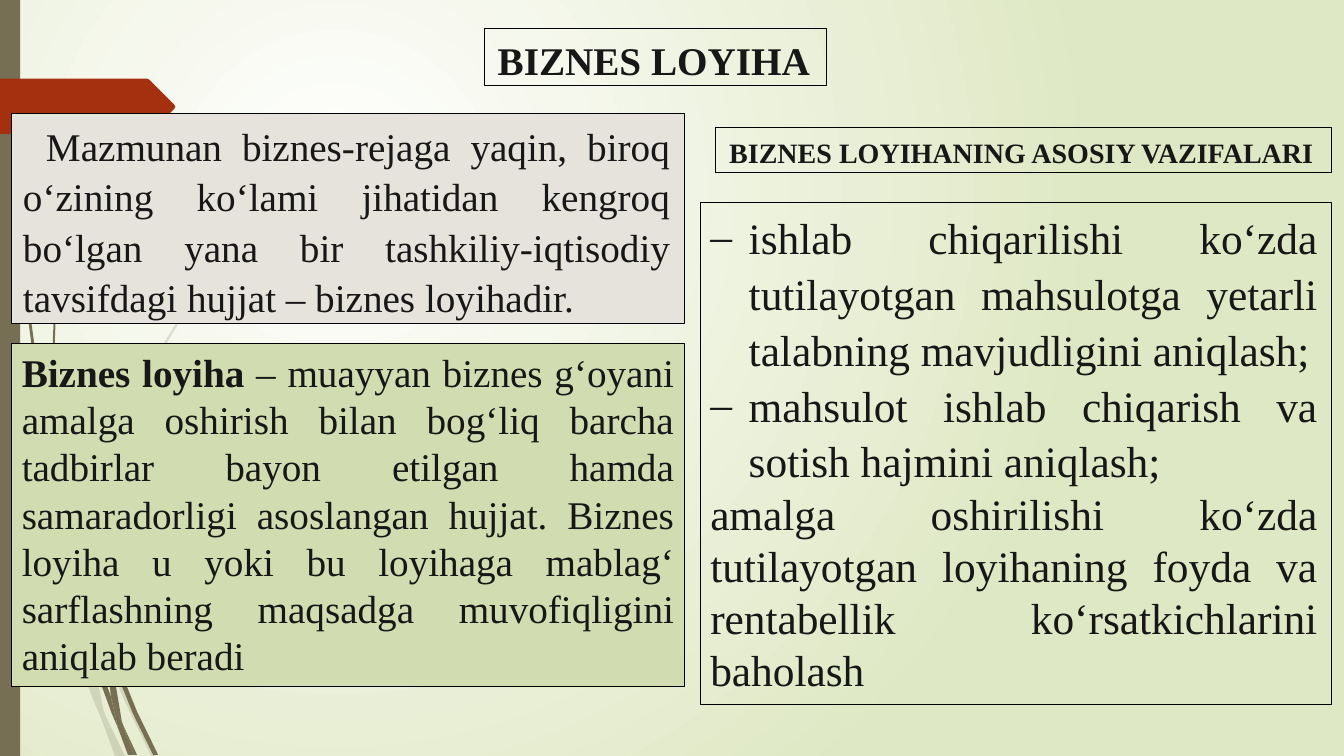
from lxml import etree
from pptx import Presentation, util as u
from pptx.dml.color import RGBColor
from pptx.enum import shapes, text
from pptx.oxml.ns import qn

FONT, INK, OLIVE, RUST = "Times New Roman", "181717", "766F54", "A53010"
UNIT = u.Cm(0.0254)  # grid step of the outlines below

PALE = [
    [(11, 350), (9, 322), (0, 282), (0, 299), (10, 344)],
    [(92, 607), (88, 596), (88, 610), (123, 694), (150, 750), (155, 750), (127, 692)],
    [(119, 750), (124, 750), (105, 711)],
    [(93, 683), (70, 619), (31, 469), (17, 376), (11, 350), (28, 470), (65, 621),
     (92, 693), (101, 714), (99, 707)],
    [(84, 599), (87, 646), (93, 683), (96, 692), (105, 711), (103, 706), (91, 646),
     (88, 610), (88, 608)],
    [(88, 584), (92, 522), (110, 462), (132, 404), (160, 349), (193, 295), (229, 245),
     (268, 198), (290, 175), (312, 154), (312, 153), (289, 175), (268, 197), (228, 244),
     (191, 294), (158, 348), (129, 403), (107, 461), (89, 522), (85, 584), (85, 586),
     (88, 596)],
    [(101, 714), (114, 750), (119, 750)],
    [(96, 692), (93, 683), (99, 707), (101, 714), (119, 750), (105, 711)],
]
DARK = [
    [(7, 110), (17, 233), (33, 355), (56, 477), (57, 481), (55, 457), (55, 453),
     (36, 355), (19, 232), (8, 109), (5, 48), (4, 0), (3, 0), (4, 48)],
    [(113, 649), (110, 641), (111, 656), (132, 708), (152, 749), (157, 749), (136, 706)],
    [(110, 691), (98, 657), (72, 556), (64, 505), (57, 477), (68, 557), (93, 659),
     (111, 708), (117, 722), (116, 717)],
    [(60, 472), (58, 453), (54, 349), (58, 245), (63, 193), (70, 141), (62, 193),
     (56, 245), (52, 349), (55, 449)],
    [(133, 749), (136, 749), (122, 719)],
    [(117, 722), (127, 749), (131, 749)],
    [(106, 645), (110, 691), (116, 706), (122, 719), (121, 716), (111, 656), (109, 651)],
    [(116, 706), (110, 691), (116, 717), (117, 722), (130, 749), (133, 749), (122, 719)],
]
TAG = [(173, 108), (148, 133), (146, 134), (136, 134), (0, 133), (0, 78), (136, 78),
       (146, 78), (148, 79), (173, 104), (174, 106)]


def rgb(code):
    return RGBColor.from_string(code)


def paint(shape, code, alpha=None):
    """Fill without an outline; alpha is a percentage."""
    shape.shadow.inherit = False
    shape.fill.solid()
    shape.fill.fore_color.rgb = rgb(code)
    shape.line.fill.background()
    if alpha:
        tint = next(shape._element.spPr.iter(qn("a:srgbClr")))
        etree.SubElement(tint, qn("a:alpha")).set("val", str(alpha * 1000))


def trace(parent, dots, code, alpha=None):
    pen = parent.build_freeform(*dots[0], scale=UNIT)
    pen.add_line_segments(dots[1:], close=True)
    paint(pen.convert_to_shape(), code, alpha)


def backdrop(slide):
    """Radial gradient, pale green around white."""
    fill = slide.background.fill
    fill.gradient()
    for stop, code, pos in zip(fill.gradient_stops, ("FFFFFF", "DFE8C4"), (0, 1)):
        stop.color.rgb = rgb(code)
        stop.position = pos
    grad = next(slide._element.iter(qn("a:gradFill")))
    grad.remove(grad.find(qn("a:lin")))
    path = etree.Element(qn("a:path"), {"path": "circle"})
    grad.find(qn("a:gsLst")).addnext(path)
    etree.SubElement(path, qn("a:fillToRect"),
                     {"l": "50000", "t": "50000", "r": "100000", "b": "100000"})


def margin(slide, height):
    """Grass, side bar and page tag along the left edge."""
    for stalks, alpha in ((PALE, 20), (DARK, None)):
        group = slide.shapes.add_group_shape()
        for dots in stalks:
            trace(group.shapes, dots, OLIVE, alpha)
    bar = slide.shapes.add_shape(shapes.MSO_SHAPE.RECTANGLE, 0, 0, u.Cm(0.51), height)
    paint(bar, OLIVE)
    trace(slide.shapes, TAG, RUST)


def frame(shape, box, fill=None, wrap=True):
    shape.left, shape.top, shape.width, shape.height = (u.Cm(n) for n in box)
    if fill:
        shape.fill.solid()
        shape.fill.fore_color.rgb = rgb(fill)
    else:
        shape.fill.background()
    shape.line.color.rgb = rgb("000000")
    shape.line.width = u.Pt(0.75)
    body = shape.text_frame
    body.word_wrap = wrap
    body.auto_size = text.MSO_AUTO_SIZE.NONE
    body.vertical_anchor = text.MSO_ANCHOR.TOP
    return body


def write(para, runs, size, align="JUSTIFY", left=0, first=0, right=0, space=None,
          after=0, bullet=None):
    """Set one paragraph; runs are (words, bold) pairs, indents in cm."""
    para.alignment = text.PP_ALIGN[align]
    if space:
        para.line_spacing = space
    para.space_after = u.Pt(after)
    props = para._p.get_or_add_pPr()
    for name, size_cm in (("marL", left), ("marR", right), ("indent", first)):
        props.set(name, str(u.Cm(size_cm)))
    if bullet:
        tint = etree.SubElement(props, qn("a:buClr"))
        etree.SubElement(tint, qn("a:srgbClr")).set("val", INK)
        etree.SubElement(props, qn("a:buFont")).set("typeface", FONT)
        etree.SubElement(props, qn("a:buChar")).set("char", bullet)
    for words, bold in runs:
        run = para.add_run()
        run.text = words
        run.font.name, run.font.size, run.font.bold = FONT, u.Pt(size), bold
        run.font.color.rgb = rgb(INK)


def heading(shape, box, words, size, after):
    body = frame(shape, box, wrap=False)
    write(body.paragraphs[0], [(words, True)], size, "CENTER", left=0.03, first=-0.03,
          right=0.1, space=1.07, after=after)


def blank(slide):
    return slide.shapes.add_textbox(0, 0, 0, 0)


def intro(slide, box):
    body = frame(blank(slide), box, "E5E3DB")
    words = ("Mazmunan biznes-rejaga yaqin, biroq o‘zining ko‘lami jihatidan kengroq "
             "bo‘lgan yana bir tashkiliy-iqtisodiy tavsifdagi hujjat – biznes loyihadir.")
    write(body.paragraphs[0], [(words, False)], 28, left=0.03, first=0.58, right=0.1,
          space=1.07, after=12.5)


def meaning(slide, box):
    body = frame(blank(slide), box, "D1DDB0")
    words = (" – muayyan biznes g‘oyani amalga oshirish bilan bog‘liq barcha tadbirlar "
             "bayon etilgan hamda samaradorligi asoslangan hujjat. Biznes loyiha u yoki bu "
             "loyihaga mablag‘ sarflashning maqsadga muvofiqligini aniqlab beradi")
    write(body.paragraphs[0], [("Biznes loyiha", True), (words, False)], 28)


def tasks(slide, box):
    body = frame(blank(slide), box)
    items = ("ishlab chiqarilishi ko‘zda tutilayotgan mahsulotga yetarli talabning "
             "mavjudligini aniqlash;",
             "mahsulot ishlab chiqarish va sotish hajmini aniqlash;")
    para = body.paragraphs[0]
    for item in items:
        write(para, [(item, False)], 31, left=0.97, first=-0.97, right=0.1, space=1.07,
              after=0.2, bullet="–")
        para = body.add_paragraph()
    last = ("amalga oshirilishi ko‘zda tutilayotgan loyihaning foyda va rentabellik "
            "ko‘rsatkichlarini baholash")
    write(para, [(last, False)], 31, right=0.1)


def main():
    deck = Presentation()
    deck.slide_width, deck.slide_height = u.Cm(33.87), u.Cm(19.05)
    slide = deck.slides.add_slide(deck.slide_layouts[5])
    backdrop(slide)
    margin(slide, deck.slide_height)
    heading(slide.shapes.title, (12.22, 0.71, 8.61, 1.45), "BIZNES LOYIHA", 28, 8)
    intro(slide, (0.3, 2.87, 16.94, 5.28))
    meaning(slide, (0.3, 8.66, 16.94, 8.64))
    heading(blank(slide), (18.03, 3.22, 15.52, 1.12),
            "BIZNES LOYIHANING ASOSIY VAZIFALARI", 20, 4.9)
    tasks(slide, (17.65, 5.11, 15.9, 12.65))
    deck.save("out.pptx")


if __name__ == "__main__":
    main()
